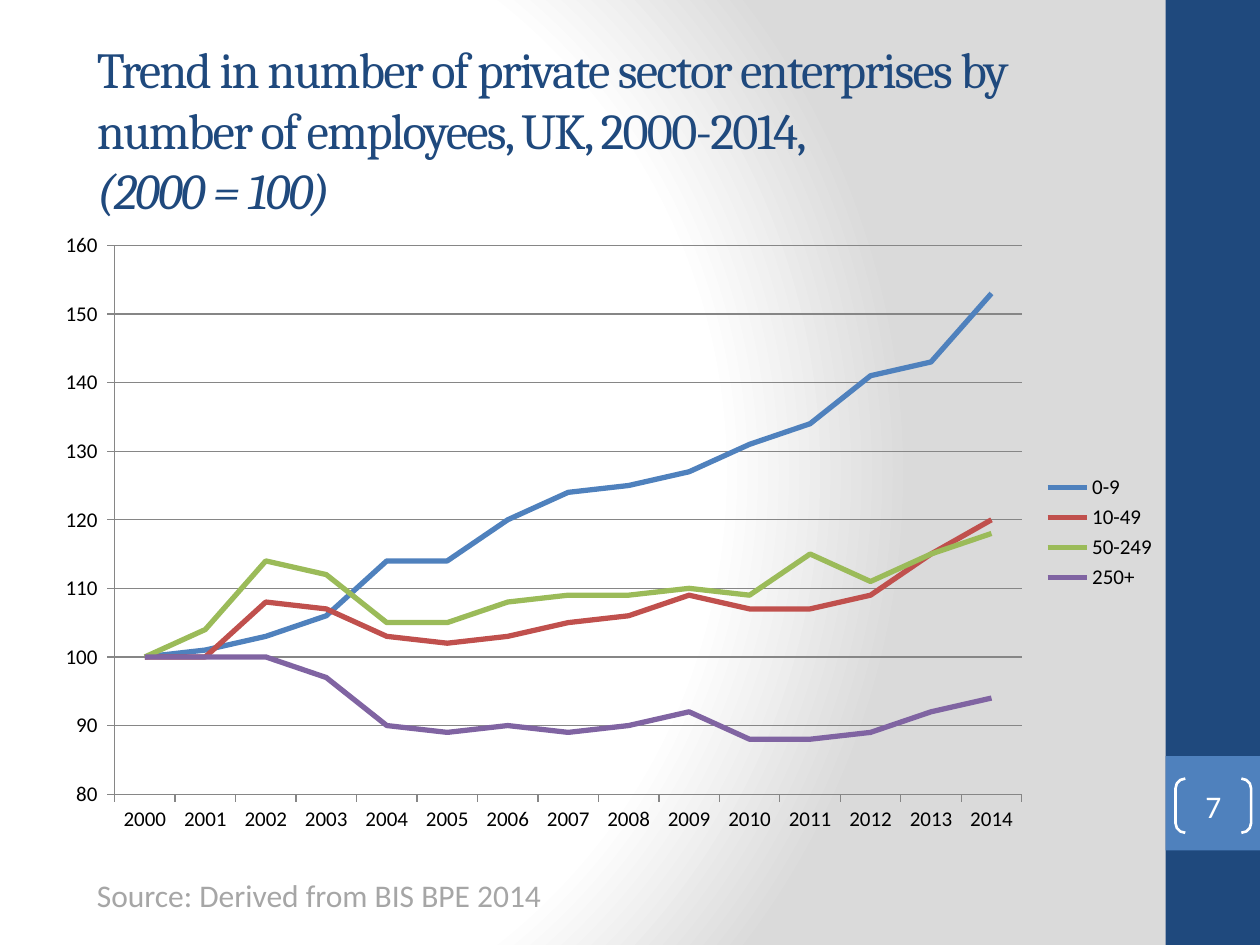
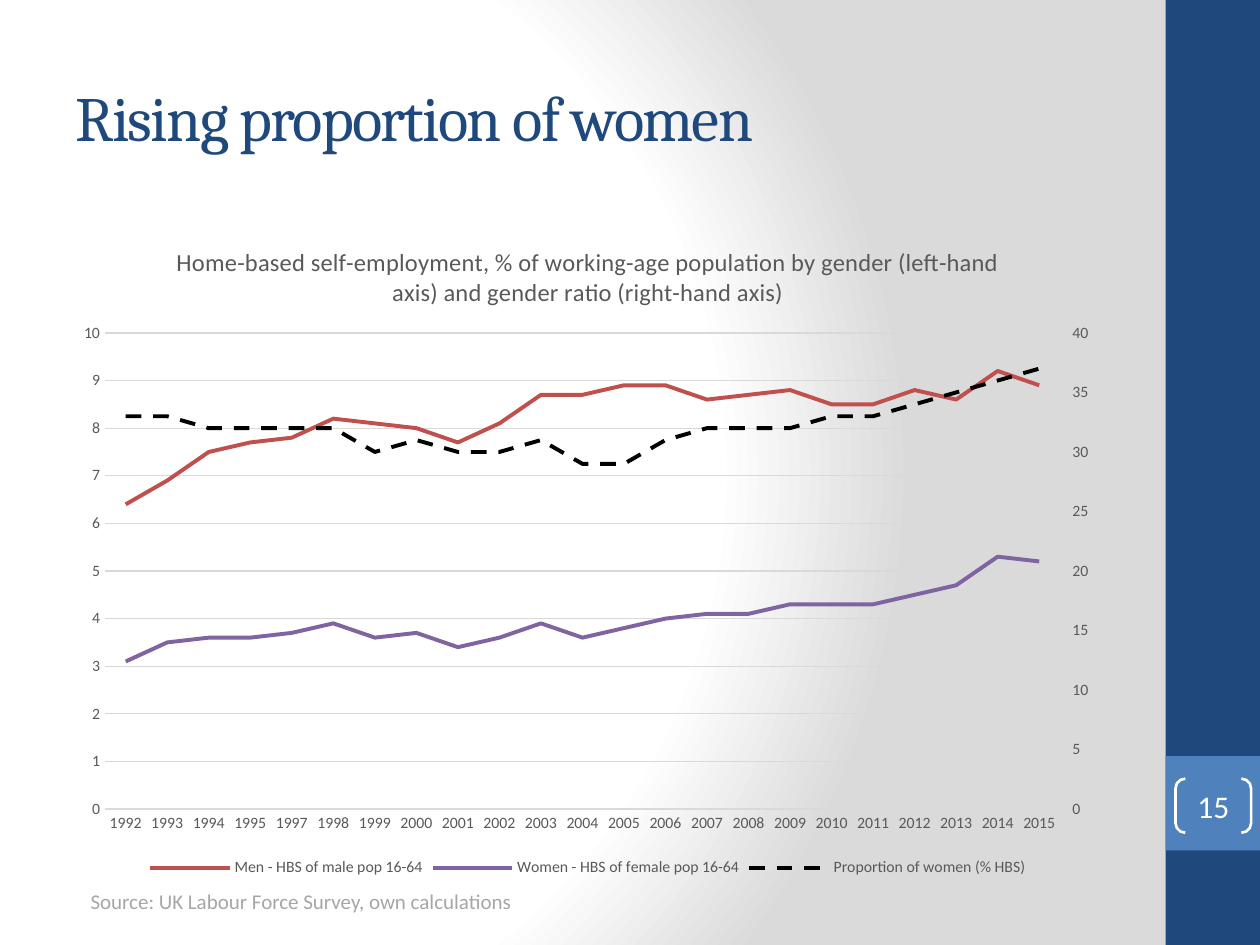
from copy import deepcopy

from pptx import Presentation
from pptx.chart.axis import ValueAxis
from pptx.chart.data import CategoryChartData
from pptx.dml.color import RGBColor
from pptx.enum.chart import XL_CHART_TYPE, XL_LEGEND_POSITION, XL_TICK_MARK
from pptx.enum.dml import MSO_LINE
from pptx.enum.shapes import MSO_SHAPE
from pptx.enum.text import MSO_ANCHOR, PP_ALIGN
from pptx.oxml import parse_xml
from pptx.oxml.ns import nsdecls, qn
from pptx.util import Inches, Pt

COLOURS = {
    "navy": "1F497D", "blue": "4F81BD", "red": "C0504D", "green": "9BBB59",
    "purple": "8064A2", "black": "000000", "white": "FFFFFF",
    "source": "A6A6A6", "label": "595959", "grid": "D9D9D9", "axis": "868686",
}
RGB = {name: RGBColor.from_string(value) for name, value in COLOURS.items()}

BACKGROUND = f"""<p:bg {nsdecls("p", "a")}><p:bgPr><a:gradFill rotWithShape="1"><a:gsLst>
<a:gs pos="0"><a:srgbClr val="FFFFFF"/></a:gs><a:gs pos="75000"><a:srgbClr val="FFFFFF"/></a:gs>
<a:gs pos="100000"><a:srgbClr val="DADADA"/></a:gs></a:gsLst>
<a:path path="circle"><a:fillToRect l="20000" t="50000" r="100000" b="50000"/></a:path>
</a:gradFill><a:effectLst/></p:bgPr></p:bg>"""
CLEAR = (f'<c:spPr {nsdecls("c", "a")}><a:noFill/><a:ln><a:noFill/></a:ln></c:spPr>')

PAGES = [
    {
        "number": "7",
        "title": ("Trend in number of private sector enterprises by number of "
                  "employees, UK, 2000-2014, ", "(2000 = 100)"),
        "title_place": (0.67, 0.3, 8.16, 1.45), "title_size": 28.8,
        "source": "Source: Derived from BIS BPE 2014",
        "source_place": (0.67, 6.9, 7.01, 0.4), "source_size": 18,
        "chart_place": (0.28, 1.75, 9, 4.95), "plot": (0.07, 0.04, 0.8, 0.88),
        "chart_title": None, "legend": XL_LEGEND_POSITION.RIGHT,
        "size": 12, "text": "black", "grid": "axis", "axis_line": True,
        "tick": XL_TICK_MARK.OUTSIDE, "scale": (80, 160, 10),
        "format": '_-* #,##0_-;\\-* #,##0_-;_-* "-"??_-;_-@_',
        "years": range(2000, 2015), "line_width": 3,
        "series": [
            ("0-9", "blue", (100, 101, 103, 106, 114, 114, 120, 124, 125, 127,
                             131, 134, 141, 143, 153)),
            ("10-49", "red", (100, 100, 108, 107, 103, 102, 103, 105, 106, 109,
                              107, 107, 109, 115, 120)),
            ("50-249", "green", (100, 104, 114, 112, 105, 105, 108, 109, 109, 110,
                                 109, 115, 111, 115, 118)),
            ("250+", "purple", (100, 100, 100, 97, 90, 89, 90, 89, 90, 92,
                                88, 88, 89, 92, 94)),
        ],
    },
    {
        "number": "15",
        "title": ("Rising proportion of women",),
        "title_place": (0.5, 0.3, 8.33, 1.25), "title_size": 36,
        "source": "Source: UK Labour Force Survey, own calculations",
        "source_place": (0.62, 7, 4.49, 0.3), "source_size": 12,
        "chart_place": (0.5, 1.75, 8.33, 5.25), "plot": (0.04, 0.17, 0.91, 0.72),
        "chart_title": "Home-based self-employment, % of working-age population by "
                       "gender (left-hand axis) and gender ratio (right-hand axis)",
        "legend": XL_LEGEND_POSITION.BOTTOM,
        "size": 9, "text": "label", "grid": "grid", "axis_line": False,
        "tick": XL_TICK_MARK.NONE, "scale": (0, 10, 1), "format": "General",
        "right_scale": (0, 40, 5),
        "years": [year for year in range(1992, 2016) if year != 1996],
        "line_width": 2.25,
        "series": [
            ("Men - HBS of male pop 16-64", "red",
             (6.4, 6.9, 7.5, 7.7, 7.8, 8.2, 8.1, 8, 7.7, 8.1, 8.7, 8.7, 8.9, 8.9,
              8.6, 8.7, 8.8, 8.5, 8.5, 8.8, 8.6, 9.2, 8.9)),
            ("Women - HBS of female pop 16-64", "purple",
             (3.1, 3.5, 3.6, 3.6, 3.7, 3.9, 3.6, 3.7, 3.4, 3.6, 3.9, 3.6, 3.8, 4,
              4.1, 4.1, 4.3, 4.3, 4.3, 4.5, 4.7, 5.3, 5.2)),
            ("Proportion of women (% HBS)", "black",
             (33, 33, 32, 32, 32, 32, 30, 31, 30, 30, 31, 29, 29, 31,
              32, 32, 32, 33, 33, 34, 35, 36, 37)),
        ],
    },
]


def style_font(font, size, colour, name="Calibri"):
    font.name, font.size, font.bold = name, Pt(size), False
    font.color.rgb = RGB[colour]


def set_scale(axis, scale):
    axis.minimum_scale, axis.maximum_scale, axis.major_unit = scale


deck = Presentation()
deck.slide_width, deck.slide_height = Inches(10), Inches(7.5)

for content in PAGES:
    page = deck.slides.add_slide(deck.slide_layouts[6])
    page.element.cSld.insert(0, parse_xml(BACKGROUND))

    # Side band with the page number
    for colour, top, height in (("navy", 0, 7.5), ("blue", 6, 0.75)):
        band = page.shapes.add_shape(MSO_SHAPE.RECTANGLE, Inches(9.25), Inches(top),
                                     Inches(0.75), Inches(height))
        band.shadow.inherit = False
        band.fill.solid()
        band.fill.fore_color.rgb = RGB[colour]
        band.line.fill.background()
    bracket = page.shapes.add_shape(MSO_SHAPE.DOUBLE_BRACKET, Inches(9.33), Inches(6.18),
                                    Inches(0.6), Inches(0.43))
    bracket.adjustments[0] = 0.18
    bracket.shadow.inherit = False
    bracket.fill.background()
    bracket.line.color.rgb = RGB["white"]
    bracket.line.width = Pt(1.5)
    frame = bracket.text_frame
    frame.margin_left = frame.margin_right = frame.margin_top = frame.margin_bottom = 0
    frame.vertical_anchor = MSO_ANCHOR.MIDDLE
    para = frame.paragraphs[0]
    para.text = content["number"]
    para.alignment = PP_ALIGN.CENTER
    style_font(para.font, 18, "white")

    # Title
    box = page.shapes.add_textbox(*map(Inches, content["title_place"]))
    box.text_frame.word_wrap = True
    box.text_frame.vertical_anchor = MSO_ANCHOR.MIDDLE
    para = box.text_frame.paragraphs[0]
    style_font(para.font, content["title_size"], "navy", "Cambria")
    for index, text in enumerate(content["title"]):
        if index:
            para.add_line_break()
        span = para.add_run()
        span.text = text
        if index:
            span.font.italic = True
        span.font._element.set("spc", "-100")

    # Chart
    chart_data = CategoryChartData()
    chart_data.categories = [str(year) for year in content["years"]]
    for name, colour, values in content["series"]:
        chart_data.add_series(name, values)
    chart = page.shapes.add_chart(XL_CHART_TYPE.LINE, *map(Inches, content["chart_place"]),
                                  chart_data).chart
    style_font(chart.font, 10, "black")
    chart.has_title = content["chart_title"] is not None
    if chart.has_title:
        para = chart.chart_title.text_frame.paragraphs[0]
        para.text = content["chart_title"]
        style_font(para.font, 14, "label")
        chart.chart_title.include_in_layout = False
    chart.has_legend = True
    chart.legend.position = content["legend"]
    chart.legend.include_in_layout = False
    style_font(chart.legend.font, content["size"], content["text"])

    for axis in (chart.category_axis, chart.value_axis):
        style_font(axis.tick_labels.font, content["size"], content["text"])
        axis.major_tick_mark = content["tick"]
        axis.minor_tick_mark = XL_TICK_MARK.NONE
        axis.format.line.color.rgb = RGB[content["grid"]]
        axis.format.line.width = Pt(0.75)
    value_axis = chart.value_axis
    if not content["axis_line"]:
        value_axis.format.line.fill.background()
    set_scale(value_axis, content["scale"])
    value_axis.tick_labels.number_format = content["format"]
    value_axis.tick_labels.number_format_is_linked = False
    value_axis.major_gridlines.format.line.color.rgb = RGB[content["grid"]]
    value_axis.major_gridlines.format.line.width = Pt(0.75)

    plot = chart.plots[0]
    plot.vary_by_categories = False
    for series, (name, colour, values) in zip(plot.series, content["series"]):
        series.smooth = False
        series.format.line.color.rgb = RGB[colour]
        series.format.line.width = Pt(content["line_width"])
        if colour == "black":
            series.format.line.dash_style = MSO_LINE.DASH

    plot_area = chart._chartSpace.chart.plotArea
    if "right_scale" in content:
        # The last series moves to a second line group with its own axes
        left_group = plot_area.find(qn("c:lineChart"))
        right_group = deepcopy(left_group)
        left_group.remove(left_group.findall(qn("c:ser"))[-1])
        for series in right_group.findall(qn("c:ser"))[:-1]:
            right_group.remove(series)
        left_group.addnext(right_group)
        right_value = deepcopy(value_axis._element)
        right_category = deepcopy(chart.category_axis._element)
        value_axis._element.addnext(right_value)
        right_value.addnext(right_category)
        for element, own, other in ((right_value, "5002", "5001"),
                                    (right_category, "5001", "5002")):
            element.find(qn("c:axId")).set("val", own)
            element.find(qn("c:crossAx")).set("val", other)
        for axis_id, value in zip(right_group.findall(qn("c:axId")), ("5001", "5002")):
            axis_id.set("val", value)
        right_category.find(qn("c:delete")).set("val", "1")
        right_value.find(qn("c:axPos")).set("val", "r")
        right_value.find(qn("c:crosses")).set("val", "max")
        right_axis = ValueAxis(right_value)
        right_axis.has_major_gridlines = False
        right_axis.major_tick_mark = XL_TICK_MARK.OUTSIDE
        set_scale(right_axis, content["right_scale"])

    for old_layout in plot_area.findall(qn("c:layout")):
        plot_area.remove(old_layout)
    sizes = "".join(f'<c:{key} val="{value}"/>'
                    for key, value in zip("xywh", content["plot"]))
    plot_area.insert(0, parse_xml(
        f'<c:layout {nsdecls("c")}><c:manualLayout><c:layoutTarget val="inner"/>'
        f'<c:xMode val="edge"/><c:yMode val="edge"/>{sizes}</c:manualLayout></c:layout>'))
    plot_area.append(parse_xml(CLEAR))
    chart._chartSpace.chart.addnext(parse_xml(CLEAR))

    # Source line
    box = page.shapes.add_textbox(*map(Inches, content["source_place"]))
    box.text_frame.word_wrap = True
    para = box.text_frame.paragraphs[0]
    para.text = content["source"]
    style_font(para.font, content["source_size"], "source")

deck.save("out.pptx")
